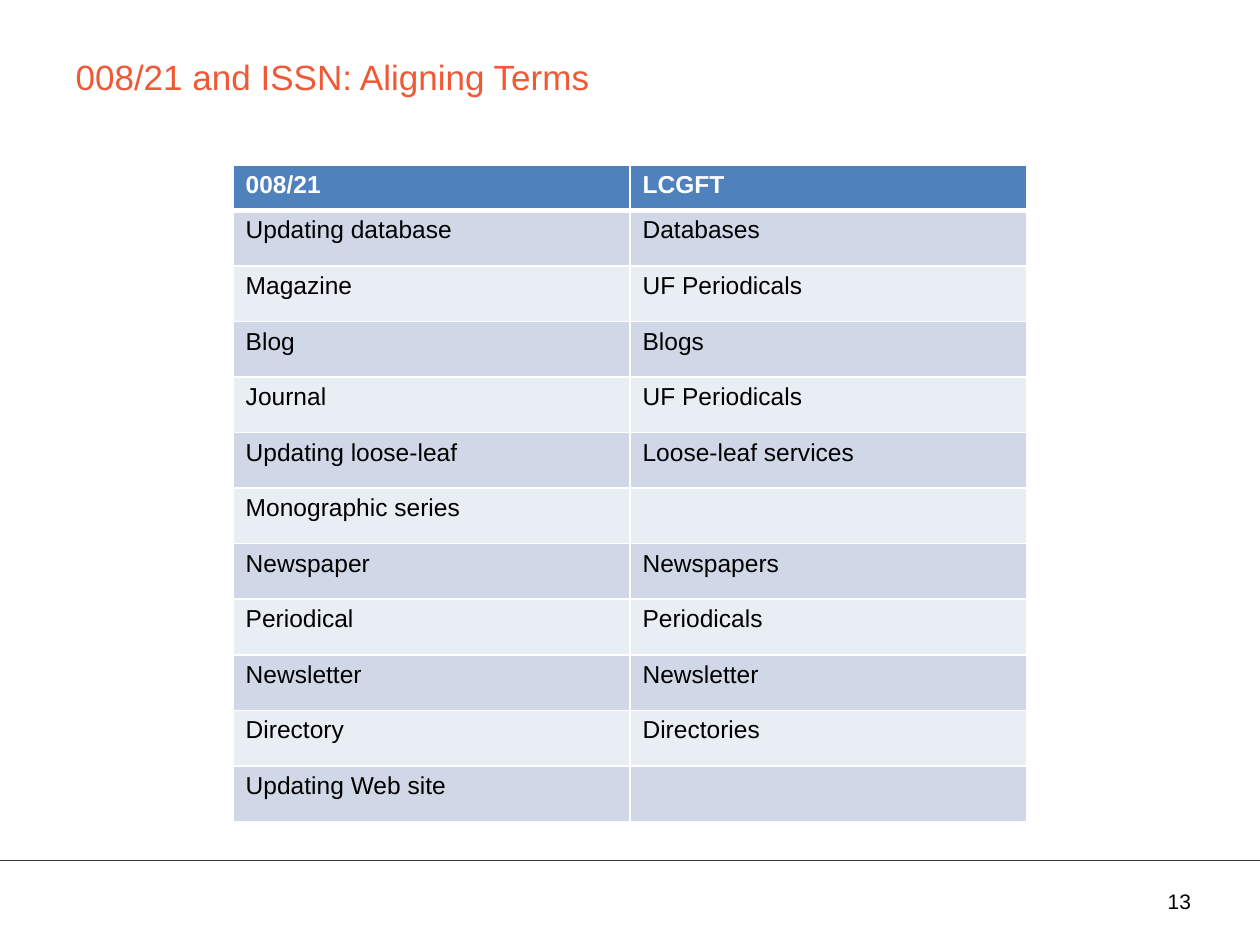
import pptx
import pptx.dml.color
import pptx.enum.shapes
import pptx.enum.text
import pptx.oxml.ns
import pptx.util
import lxml.etree

Cm = pptx.util.Cm
Pt = pptx.util.Pt
qn = pptx.oxml.ns.qn

COLORS = {
    "title": "F05936",
    "rule": "373535",
    "header": "4F81BD",
    "odd": "D0D8E8",
    "even": "E9EDF4",
    "white": "FFFFFF",
    "black": "000000",
}
ROWS = [
    ("008/21", "LCGFT"),
    ("Updating database", "Databases"),
    ("Magazine", "UF Periodicals"),
    ("Blog", "Blogs"),
    ("Journal", "UF Periodicals"),
    ("Updating loose-leaf", "Loose-leaf services"),
    ("Monographic series", ""),
    ("Newspaper", "Newspapers"),
    ("Periodical", "Periodicals"),
    ("Newsletter", "Newsletter"),
    ("Directory", "Directories"),
    ("Updating Web site", ""),
]


def write_text(frame, text, color, **formats):
    para = frame.paragraphs[0]
    para.alignment = pptx.enum.text.PP_ALIGN.LEFT
    span = para.add_run() if text else para
    if text:
        span.text = text
    for name, value in {"name": "Arial", **formats}.items():
        setattr(span.font, name, value)
    span.font.color.rgb = pptx.dml.color.RGBColor.from_string(COLORS[color])


def add_borders(cell, widths):
    properties = cell._tc.get_or_add_tcPr()
    for position, (side, width) in enumerate(widths.items()):
        line = lxml.etree.Element(qn(f"a:ln{side}"), w=str(Pt(width)))
        fill = lxml.etree.SubElement(line, qn("a:solidFill"))
        lxml.etree.SubElement(fill, qn("a:srgbClr"), val=COLORS["white"])
        properties.insert(position, line)


deck = pptx.Presentation()
deck.slide_width = Cm(25.4)
deck.slide_height = Cm(19.05)
page = deck.slides.add_slide(deck.slide_layouts[5])

title = page.shapes.title
title_place = {"left": Cm(1.27), "top": Cm(0.76), "width": Cm(22.86), "height": Cm(1.57)}
for name, value in title_place.items():
    setattr(title, name, value)
title.text_frame.vertical_anchor = pptx.enum.text.MSO_ANCHOR.MIDDLE
write_text(title.text_frame, "008/21 and ISSN: Aligning Terms", "title", size=Pt(20))

rule = page.shapes.add_connector(
    pptx.enum.shapes.MSO_CONNECTOR.STRAIGHT, 0, Cm(17.35), deck.slide_width, Cm(17.35)
)
rule.line.width = Pt(0.75)
rule.line.color.rgb = pptx.dml.color.RGBColor.from_string(COLORS["rule"])
lxml.etree.SubElement(rule._element.spPr, qn("a:effectLst"))

number_box = page.shapes.add_textbox(Cm(23.29), Cm(17.78), Cm(1.7), Cm(0.76))
number_box.text_frame.word_wrap = True
write_text(number_box.text_frame, "13", "black", size=Pt(12))

table = page.shapes.add_table(len(ROWS), 2, Cm(4.7), Cm(3.33), Cm(16), Cm(13.23)).table
for column in table.columns:
    column.width = Cm(8)
for index, terms in enumerate(ROWS):
    is_header = index == 0
    table.rows[index].height = Cm(0.91 if is_header else 1.12)
    fill_name = "header" if is_header else "odd" if index % 2 else "even"
    widths = {"L": 1, "R": 1, "T": 3 if index == 1 else 1, "B": 3 if is_header else 1}
    for cell, term in zip(table.rows[index].cells, terms):
        cell.fill.solid()
        cell.fill.fore_color.rgb = pptx.dml.color.RGBColor.from_string(COLORS[fill_name])
        add_borders(cell, widths)
        text_color = "white" if is_header else "black"
        write_text(cell.text_frame, term, text_color, size=Pt(14), bold=is_header)

deck.save("out.pptx")
